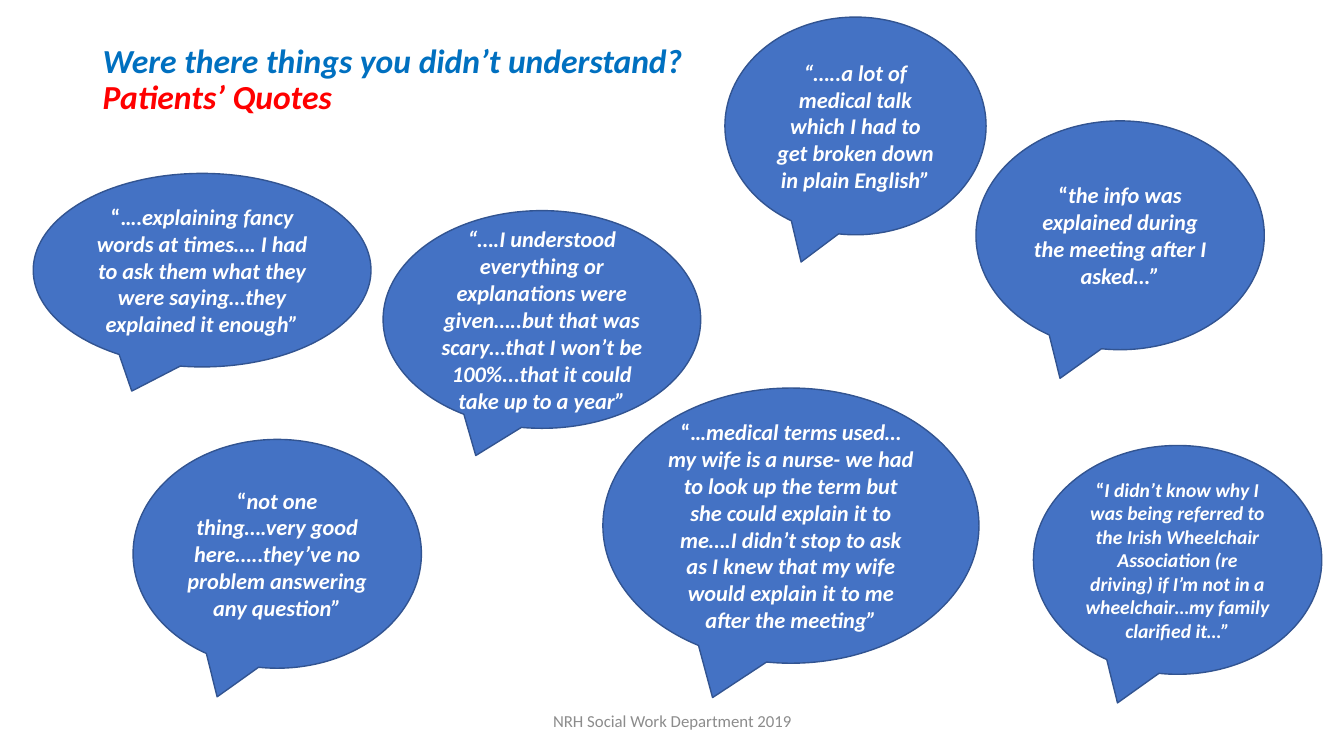
from dataclasses import dataclass

from pptx import Presentation
from pptx.dml.color import RGBColor
from pptx.enum.shapes import MSO_SHAPE
from pptx.enum.text import MSO_ANCHOR, PP_ALIGN
from pptx.slide import Slide
from pptx.text.text import Font, TextFrame
from pptx.util import Inches, Pt


@dataclass(frozen=True)
class Quote:
    left: float
    top: float
    width: float
    height: float
    upright: str  # opening characters set without italics
    italic: str
    size: int = 16


QUOTES = [
    Quote(3.8, 2.09, 3.15, 2.16, "",
          "“….I understood everything or explanations were given…..but that was "
          "scary…that I won’t be 100%...that it could take up to a year”"),
    Quote(7.19, 0.17, 2.59, 2.16, "",
          "“…..a lot of medical talk which I had to get broken down in plain English”"),
    Quote(5.98, 3.85, 3.73, 2.73, "“…",
          "medical terms used…my wife is a nurse- we had to look up the term but she "
          "could explain it to me….I didn’t stop to ask as I knew that my wife would "
          "explain it to me after the meeting”"),
    Quote(1.32, 4.36, 2.86, 2.27, "“",
          "not one thing….very good here…..they’ve no problem answering any question”"),
    Quote(0.33, 1.72, 3.35, 1.92, "“….",
          "explaining fancy words at times…. I had to ask them what they were "
          "saying…they explained it enough”"),
    Quote(10.25, 4.42, 2.86, 2.27, "“",
          "I didn’t know why I was being referred to the Irish Wheelchair Association "
          "(re driving) if I’m not in a wheelchair…my family clarified it…”", 14),
    Quote(9.68, 1.2, 2.86, 2.27, "“",
          "the info was explained during the meeting after I asked…”"),
]
TITLE_LINES = [
    ("Were there things you didn’t understand?", "0070C0"),
    ("Patients’ Quotes", "FF0000"),
]


def color(value: str) -> RGBColor:
    return RGBColor.from_string(value)


def style(font: Font, size: int, value: str, bold: bool = True) -> None:
    font.name = "Calibri"
    font.size = Pt(size)
    font.bold = bold
    font.color.rgb = color(value)


def add_text_frame(page: Slide, left: float, top: float,
                   width: float, height: float) -> TextFrame:
    box = page.shapes.add_textbox(Inches(left), Inches(top), Inches(width), Inches(height))
    box.text_frame.word_wrap = True
    return box.text_frame


def add_title(page: Slide) -> None:
    frame = add_text_frame(page, 0.92, 0.4, 11.5, 1.21)
    frame.margin_top = Inches(0.04)
    for index, (text, value) in enumerate(TITLE_LINES):
        para = frame.add_paragraph() if index else frame.paragraphs[0]
        para.text = text
        para.line_spacing = 0.9
        style(para.font, 24, value)
        para.font.italic = True


def add_quote(page: Slide, quote: Quote) -> None:
    bubble = page.shapes.add_shape(
        MSO_SHAPE.OVAL_CALLOUT, Inches(quote.left), Inches(quote.top),
        Inches(quote.width), Inches(quote.height))
    bubble.shadow.inherit = False
    bubble.fill.solid()
    bubble.fill.fore_color.rgb = color("4472C4")
    bubble.line.color.rgb = color("325491")
    bubble.line.width = Pt(1)
    frame = bubble.text_frame
    frame.word_wrap = True
    frame.vertical_anchor = MSO_ANCHOR.MIDDLE
    para = frame.paragraphs[0]
    para.alignment = PP_ALIGN.CENTER
    style(para.font, quote.size, "FFFFFF")
    if quote.upright:
        para.add_run().text = quote.upright
    span = para.add_run()
    span.text = quote.italic
    span.font.italic = True


def add_footer(page: Slide) -> None:
    frame = add_text_frame(page, 4.42, 6.95, 4.5, 0.4)
    frame.vertical_anchor = MSO_ANCHOR.MIDDLE
    para = frame.paragraphs[0]
    para.text = "NRH Social Work Department 2019"
    para.alignment = PP_ALIGN.CENTER
    style(para.font, 12, "8C8C8C", bold=False)


def main() -> None:
    deck = Presentation()
    deck.slide_width, deck.slide_height = Inches(13.33), Inches(7.5)
    page = deck.slides.add_slide(deck.slide_layouts[6])

    # Heading, speech bubbles, footer
    add_title(page)
    for quote in QUOTES:
        add_quote(page, quote)
    add_footer(page)

    deck.save("out.pptx")


if __name__ == "__main__":
    main()
